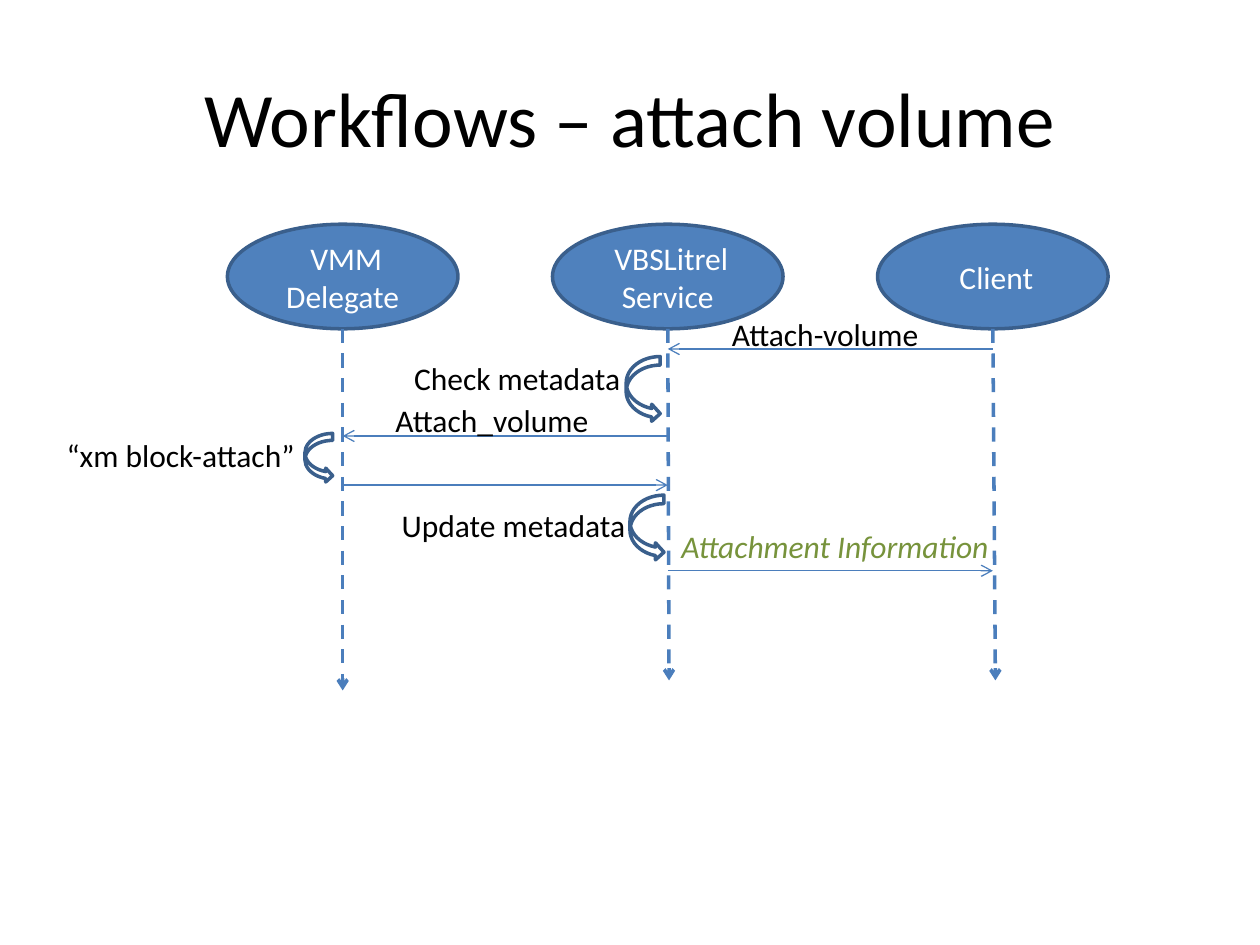
from dataclasses import dataclass

from lxml.etree import SubElement
from pptx import Presentation
from pptx.dml.color import RGBColor
from pptx.enum.dml import MSO_LINE
from pptx.enum.shapes import MSO_CONNECTOR, MSO_SHAPE
from pptx.enum.text import MSO_ANCHOR, PP_ALIGN
from pptx.oxml.ns import qn
from pptx.util import Inches, Pt


@dataclass(frozen=True)
class Theme:
    font: str = "Calibri"
    head: int = 44
    body: int = 18
    thick: float = 2
    thin: float = 0.75
    ink: RGBColor = RGBColor(0, 0, 0)
    pale: RGBColor = RGBColor(255, 255, 255)
    fill: RGBColor = RGBColor(0x4F, 0x81, 0xBD)
    edge: RGBColor = RGBColor(0x3A, 0x5F, 0x8C)
    link: RGBColor = RGBColor(0x4B, 0x7E, 0xBC)
    reply: RGBColor = RGBColor(0x77, 0x93, 0x3C)


look = Theme()
deck = Presentation()
deck.slide_width, deck.slide_height = Inches(10), Inches(7.5)
slide = deck.slides.add_slide(deck.slide_layouts[5])
shapes = slide.shapes


def write(shape, text, size=look.body, color=look.ink, align=PP_ALIGN.LEFT,
          anchor=MSO_ANCHOR.TOP, italic=False):
    frame = shape.text_frame
    frame.word_wrap = True
    frame.vertical_anchor = anchor
    para = frame.paragraphs[0]
    para.alignment = align
    run = para.add_run()
    run.text = text
    run.font.name = look.font
    run.font.size = Pt(size)
    run.font.italic = italic
    run.font.color.rgb = color


def arrow(start, end, width):
    """Draw a line with an open arrowhead at its end."""
    line = shapes.add_connector(MSO_CONNECTOR.STRAIGHT,
                                *map(Inches, (*start, *end)))
    line.line.color.rgb = look.link
    line.line.width = Pt(width)
    if width == look.thick:
        line.line.dash_style = MSO_LINE.DASH
    props = line._element.spPr
    SubElement(props.find(qn("a:ln")), qn("a:tailEnd"), type="arrow")
    SubElement(props, qn("a:effectLst"))


title = shapes.title
title.left, title.top, title.width, title.height = map(Inches, (0.5, 0.3, 9, 1.25))
write(title, "Workflows – attach volume", size=look.head,
      align=PP_ALIGN.CENTER, anchor=MSO_ANCHOR.MIDDLE)

# Three lanes at equal steps, each an actor over a dashed lifeline
first, step = 2.72, 2.58
lanes = [first + step * i for i in range(3)]
wide, high, top = 1.83, 0.83, 1.78
base = top + high
actors = [(" VMM Delegate", 5.48), (" VBSLitrel Service", 5.4), (" Client", 5.4)]
for i, (name, foot) in enumerate(actors):
    x = lanes[i]
    oval = shapes.add_shape(MSO_SHAPE.OVAL, Inches(x - wide / 2), Inches(top),
                            Inches(wide), Inches(high))
    oval.shadow.inherit = False
    oval.fill.solid()
    oval.fill.fore_color.rgb = look.fill
    oval.line.color.rgb = look.edge
    oval.line.width = Pt(look.thick)
    write(oval, name, color=look.pale, align=PP_ALIGN.CENTER,
          anchor=MSO_ANCHOR.MIDDLE)
    arrow((x, base), (x + 0.01 * i, foot), look.thick)

# Messages: from lane, to lane, height
for src, dst, y in [(2, 1, 2.77), (1, 0, 3.46), (0, 1, 3.85), (1, 2, 4.53)]:
    arrow((lanes[src], y), (lanes[dst], y), look.thin)

# Steps an actor takes on its own
for box in [(4.97, 2.83, 0.27, 0.52), (2.42, 3.44, 0.22, 0.39),
            (5, 3.93, 0.27, 0.52)]:
    loop = shapes.add_shape(MSO_SHAPE.CURVED_RIGHT_ARROW, *map(Inches, box))
    loop.shadow.inherit = False
    loop.fill.background()
    loop.line.color.rgb = look.edge
    loop.line.width = Pt(look.thick)

mid = {"align": PP_ALIGN.CENTER}
labels = [
    ("Attach-volume", 5.71, 2.45, 1.92, {}),
    ("Check metadata", 3.06, 2.8, 2.09, mid),
    ("Attach_volume", 3.04, 3.13, 1.92, {}),
    ("“xm block-attach”", 0.43, 3.41, 2.09, {}),
    ("Update metadata", 3.03, 3.97, 2.09, mid),
    ("Attachment Information", 5.31, 4.13, 2.76,
     {"color": look.reply, "italic": True}),
]
for text, x, y, span, style in labels:
    box = shapes.add_textbox(*map(Inches, (x, y, span, 0.4)))
    write(box, text, **style)

deck.save("out.pptx")
